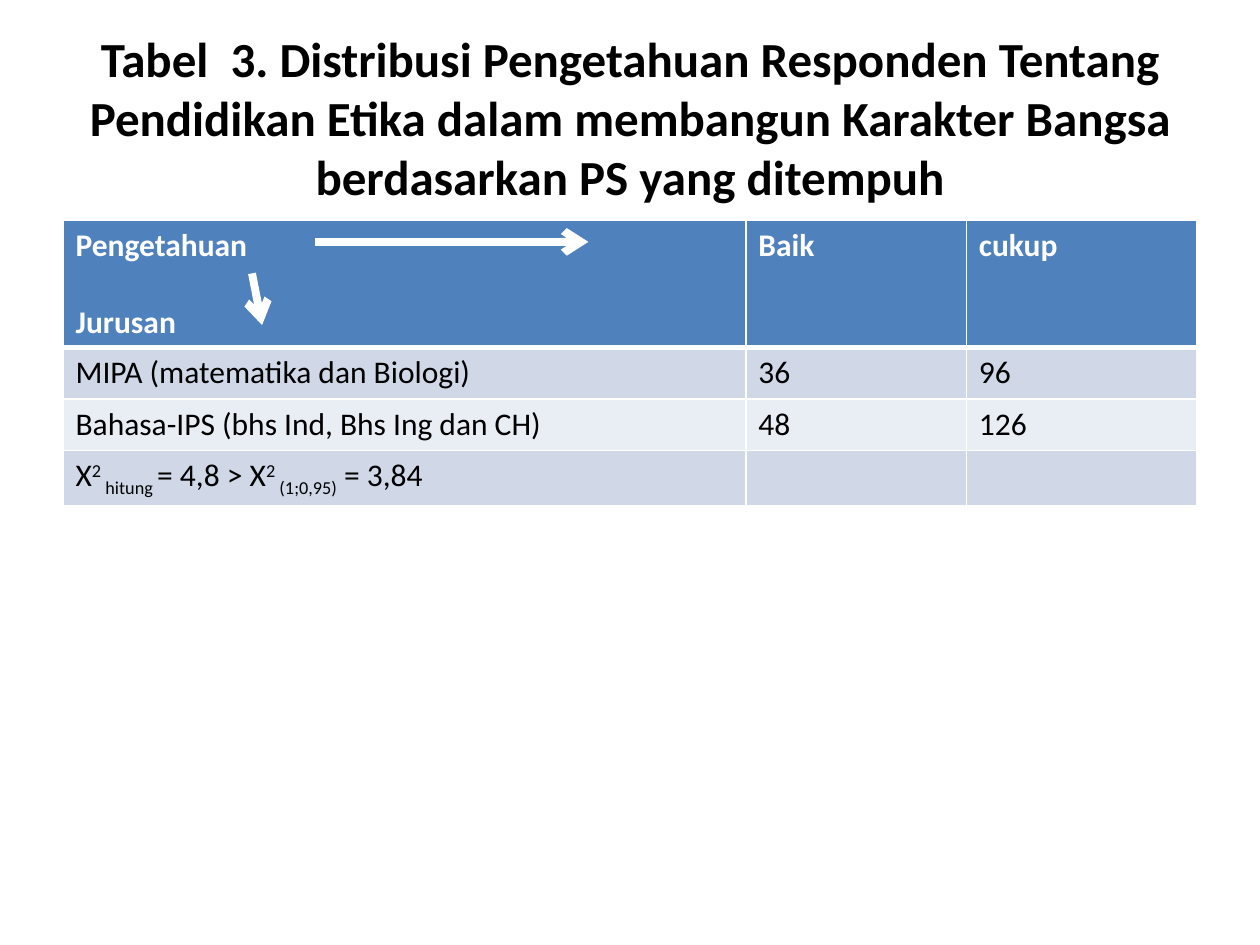
import pptx
import pptx.util
import pptx.dml.color
import pptx.enum.shapes
import pptx.enum.text
import pptx.oxml
import pptx.oxml.ns

Inches, Pt = pptx.util.Inches, pptx.util.Pt
RGBColor = pptx.dml.color.RGBColor
qn = pptx.oxml.ns.qn

WHITE = RGBColor(0xFF, 0xFF, 0xFF)
BLACK = RGBColor(0, 0, 0)
HEADER = RGBColor(0x4F, 0x81, 0xBD)
BANDS = [RGBColor(0xD0, 0xD8, 0xE8), RGBColor(0xE9, 0xED, 0xF4)]
FONT = "Calibri"

TITLE = ("Tabel  3. Distribusi Pengetahuan Responden Tentang Pendidikan Etika "
         "dalam membangun Karakter Bangsa berdasarkan PS yang ditempuh")
ROWS = [
    ["Pengetahuan\nJurusan", "Baik", "cukup"],
    ["MIPA (matematika dan Biologi)", "36", "96"],
    ["Bahasa-IPS (bhs Ind, Bhs Ing dan CH)", "48", "126"],
    ["", "", ""],
]
# Chi-square result: text and baseline shift in percent
CHI_SQUARE = [("X", 0), ("2 ", 30), ("hitung ", -25), ("= 4,8 > X", 0),
              ("2 ", 30), ("(1;0,95)", -25), (" = 3,84", 0)]
COL_WIDTHS = [5.42, 1.75, 1.83]
ROW_HEIGHTS = [1, 0.41, 0.41, 0.41]


def style_text(tf, size, color, bold):
    for p in tf.paragraphs:
        for r in p.runs:
            r.font.name = FONT
            r.font.size = Pt(size)
            r.font.bold = bold
            r.font.color.rgb = color


def set_borders(cell, bottom):
    tcPr = cell._tc.get_or_add_tcPr()
    widths = {"lnL": 1, "lnR": 1, "lnT": 1, "lnB": bottom}
    for i, (side, width) in enumerate(widths.items()):
        tcPr.insert(i, pptx.oxml.parse_xml(
            f'<a:{side} {pptx.oxml.ns.nsdecls("a")} w="{Pt(width)}">'
            f'<a:solidFill><a:srgbClr val="{WHITE}"/></a:solidFill></a:{side}>'))


def add_title(slide, left, top, width, height):
    tf = slide.shapes.add_textbox(left, top, width, height).text_frame
    tf.word_wrap = True
    tf.vertical_anchor = pptx.enum.text.MSO_ANCHOR.MIDDLE
    tf.text = TITLE
    tf.paragraphs[0].alignment = pptx.enum.text.PP_ALIGN.CENTER
    style_text(tf, 28, BLACK, True)


def add_distribution_table(slide, left, top, width, height):
    table = slide.shapes.add_table(len(ROWS), len(COL_WIDTHS),
                                   left, top, width, height).table
    for column, w in zip(table.columns, COL_WIDTHS):
        column.width = Inches(w)
    for row, h in zip(table.rows, ROW_HEIGHTS):
        row.height = Inches(h)

    for i, texts in enumerate(ROWS):
        is_header = i == 0
        for j, text in enumerate(texts):
            cell = table.cell(i, j)
            cell.text_frame.text = text
            cell.fill.solid()
            cell.fill.fore_color.rgb = HEADER if is_header else BANDS[(i - 1) % 2]
            set_borders(cell, 3 if is_header else 1)

    # One line of space between the two header labels
    table.cell(0, 0).text_frame.paragraphs[1].space_before = Pt(22)

    # Result row with superscripts and subscripts
    p = table.cell(3, 0).text_frame.paragraphs[0]
    for text, baseline in CHI_SQUARE:
        r = p.add_run()
        r.text = text
        if baseline:
            r._r.get_or_add_rPr().set("baseline", str(baseline * 1000))

    for i, row in enumerate(table.rows):
        for cell in row.cells:
            style_text(cell.text_frame, 18, BLACK if i else WHITE, i == 0)


def add_arrow(slide, x1, y1, x2, y2):
    line = slide.shapes.add_connector(
        pptx.enum.shapes.MSO_CONNECTOR.STRAIGHT,
        Inches(x1), Inches(y1), Inches(x2), Inches(y2))
    line.line.color.rgb = WHITE
    line.line.width = Pt(4.5)
    ln = line.line._get_or_add_ln()
    ln.append(ln.makeelement(qn("a:tailEnd"), {"type": "arrow"}))
    spPr = line._element.spPr
    spPr.append(spPr.makeelement(qn("a:effectLst"), {}))


def main():
    prs = pptx.Presentation()
    prs.slide_width, prs.slide_height = Inches(10), Inches(7.5)
    s = prs.slides.add_slide(prs.slide_layouts[6])

    add_title(s, Inches(0.5), Inches(0.3), Inches(9), Inches(1.25))
    add_distribution_table(s, Inches(0.5), Inches(1.75), Inches(9),
                           Inches(sum(ROW_HEIGHTS)))
    # Arrows from the header labels to the columns and the rows
    add_arrow(s, 2.5, 1.92, 4.67, 1.92)
    add_arrow(s, 2, 2.17, 2.08, 2.58)

    prs.save("out.pptx")


if __name__ == "__main__":
    main()
